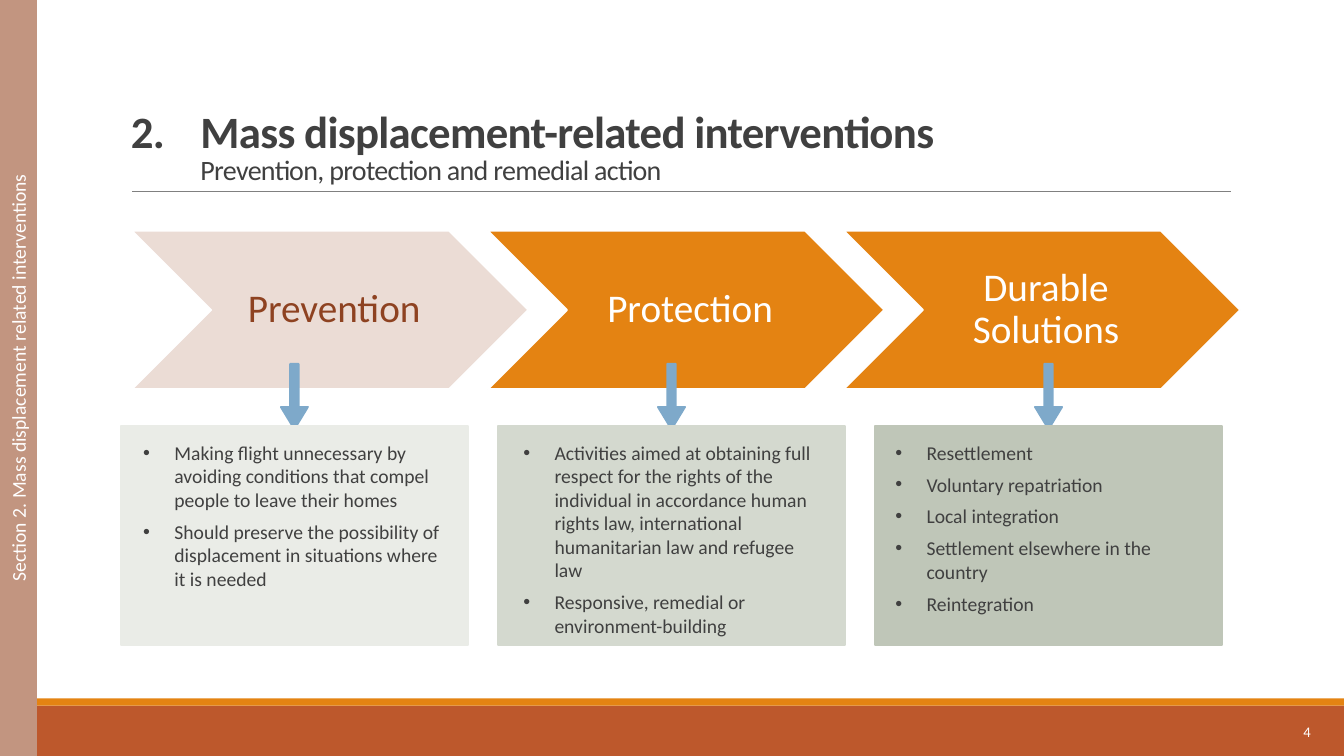
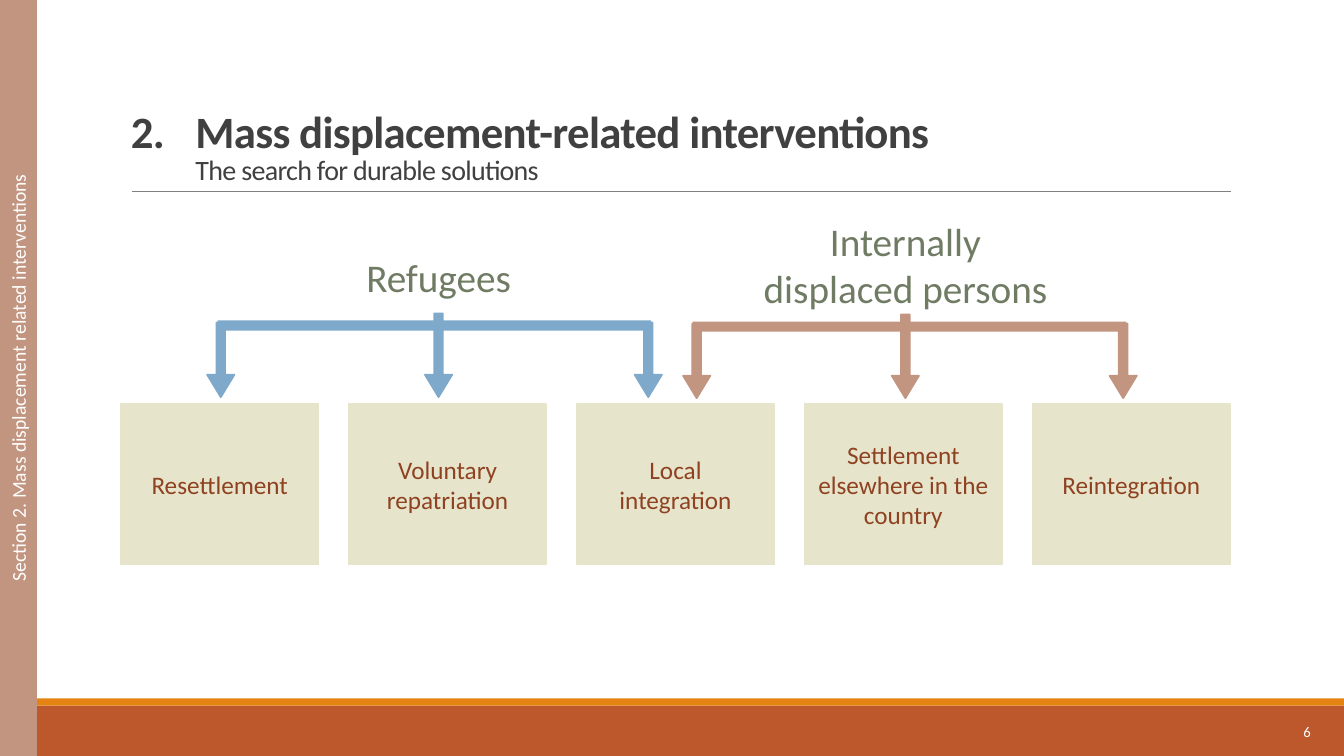
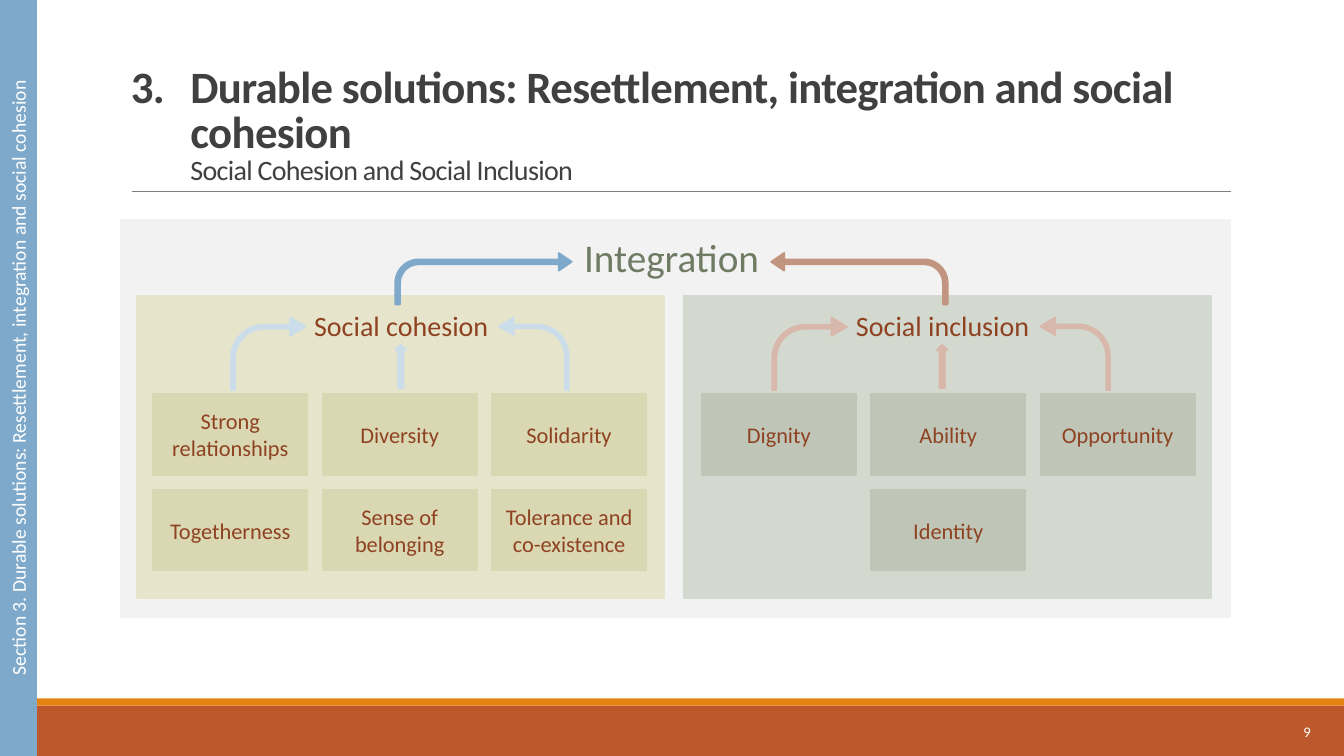
import pptx
import pptx.util
import pptx.dml.color
import pptx.enum.shapes
import pptx.enum.text
import pptx.oxml.ns
from lxml import etree

Inches = pptx.util.Inches
Pt = pptx.util.Pt
SHAPE = pptx.enum.shapes.MSO_SHAPE
ALIGN = pptx.enum.text.PP_ALIGN
ANCHOR = pptx.enum.text.MSO_ANCHOR

COLOURS = {
    "white": "FFFFFF", "ink": "404040", "rule": "808080", "panel": "F2F2F2",
    "rust": "BD582C", "orange": "E48312", "brown": "8E4221", "blush": "EBDCD5",
    "clay": "C29580", "pale clay": "D7B8AB", "blue": "7EA9CA", "pale blue": "CCDDEA",
    "moss": "6F7B63", "sage 1": "EAECE7", "sage 2": "D4D9CF", "sage 3": "BFC6B8",
    "sand": "E7E4CC", "dark sand": "DAD7B3",
}
STEM = (0.316, 0.823)
ARROW_WIDTH = 0.27


class Deck:
    font = "Calibri"

    def __init__(self):
        self.deck = pptx.Presentation()
        self.deck.slide_width = Inches(13.33)
        self.deck.slide_height = Inches(7.5)
        self.page = None

    def colour(self, name):
        return pptx.dml.color.RGBColor.from_string(COLOURS[name])

    def shape(self, kind, place, fill, line=None, adjust=(), flip=False):
        shape = self.page.shapes.add_shape(kind, *map(Inches, place))
        shape.shadow.inherit = False
        shape.fill.solid()
        shape.fill.fore_color.rgb = self.colour(fill)
        if line:
            shape.line.color.rgb = self.colour(line)
            shape.line.width = Pt(1.25)
        else:
            shape.line.fill.background()
        for index, value in enumerate(adjust):
            shape.adjustments[index] = value
        if flip:
            shape._element.spPr.xfrm.set("flipH", "1")
        return shape

    def box(self, place):
        return self.page.shapes.add_textbox(*map(Inches, place))

    def style(self, span, size, colour, bold=False):
        span.font.name = self.font
        span.font.size = Pt(size)
        span.font.bold = bold
        span.font.color.rgb = self.colour(colour)

    def set_text(self, holder, text, size, colour, align=ALIGN.CENTER,
                 anchor=ANCHOR.MIDDLE, insets=(0.1, 0.05, 0.1, 0.05)):
        frame = holder.text_frame
        frame.text = text
        frame.word_wrap = True
        frame.vertical_anchor = anchor
        (frame.margin_left, frame.margin_top,
         frame.margin_right, frame.margin_bottom) = map(Inches, insets)
        for para in frame.paragraphs:
            para.alignment = align
            for span in para.runs:
                self.style(span, size, colour)
        return frame

    def hang(self, para, indent):
        properties = para._p.get_or_add_pPr()
        properties.set("marL", str(Inches(indent)))
        properties.set("indent", str(-Inches(indent)))
        return properties

    def bullets(self, holder, items, left):
        frame = self.set_text(holder, "\n".join(items), 14, "ink", ALIGN.LEFT,
                              ANCHOR.TOP, (left, 0.14, 0.49 - left, 0.05))
        for para in frame.paragraphs:
            para.space_after = Pt(6)
            properties = self.hang(para, 0.31)
            etree.SubElement(properties, pptx.oxml.ns.qn("a:buFont"), typeface="Arial")
            etree.SubElement(properties, pptx.oxml.ns.qn("a:buChar"), char="•")

    def title(self, number, heading, subtitle, indent, width):
        frame = self.set_text(self.box((1.2, 0.31, width, 1.59)),
                              f"{number}.\t{heading}\v{subtitle}", 32, "ink",
                              ALIGN.LEFT, ANCHOR.BOTTOM)
        para = frame.paragraphs[0]
        para.line_spacing = 0.85
        self.hang(para, indent)
        for span, size, bold in zip(para.runs, (32, 20), (True, False)):
            self.style(span, size, "ink", bold)
            span._r.get_or_add_rPr().set("spc", "-50")

    def rule(self):
        line = self.page.shapes.add_connector(
            pptx.enum.shapes.MSO_CONNECTOR.STRAIGHT,
            Inches(1.31), Inches(1.9), Inches(12.21), Inches(1.9))
        line.line.color.rgb = self.colour("rule")
        line.line.width = Pt(0.5)
        etree.SubElement(line._element.spPr, pptx.oxml.ns.qn("a:effectLst"))

    def start(self, number, section, band, heading, subtitle, indent, page_number, width=11):
        self.page = self.deck.slides.add_slide(self.deck.slide_layouts[6])
        self.shape(SHAPE.RECTANGLE, (0, 7, 13.33, 0.5), "rust")
        self.shape(SHAPE.RECTANGLE, (0, 6.93, 13.33, 0.07), "orange")
        self.rule()
        self.title(number, heading, subtitle, indent, width)
        self.set_text(self.box((11.67, 7.06, 1.43, 0.4)), page_number, 10.5, "white", ALIGN.RIGHT)
        side = self.shape(SHAPE.RECTANGLE, (0, 0, 0.36, 7.5), band, band)
        frame = self.set_text(side, f"Section {number}. {section}", 14, "white")
        frame._txBody.bodyPr.set("vert", "vert270")

    def card(self, place, fill, text="", size=16):
        card = self.shape(SHAPE.RECTANGLE, place, fill, fill)
        if text:
            self.set_text(card, text, size, "brown")
        return card

    def label(self, centre, top, width, height, text, size, colour):
        self.set_text(self.box((centre - width / 2, top, width, height)),
                      text, size, colour, anchor=ANCHOR.TOP)

    def down_arrow(self, centre, top, height, colour):
        self.shape(SHAPE.DOWN_ARROW, (centre - ARROW_WIDTH / 2, top, ARROW_WIDTH, height),
                   colour, colour, STEM)

    def bent_arrow(self, place, colour, adjust, flip=False):
        self.shape(SHAPE.BENT_ARROW, place, colour, colour, adjust, flip)

    def fork(self, left, top, colour, centres):
        self.shape(SHAPE.RECTANGLE, (left, top, 4.3, 0.1), colour)
        for centre, rise, height in zip(centres, (-0.02, 0.07, -0.02), (0.74, 0.83, 0.74)):
            self.down_arrow(centre, top - rise, height, colour)


def interventions(deck):
    deck.start(2, "Mass displacement related interventions", "clay",
               "Mass displacement-related interventions",
               "Prevention, protection and remedial action", 0.69, "4")
    stages = [
        ("Prevention", "blush", "brown", "sage 1", 0.22, [
            "Making flight unnecessary by avoiding conditions that compel people to leave their homes",
            "Should preserve the possibility of displacement in situations where it is needed"]),
        ("Protection", "orange", "white", "sage 2", 0.25, [
            "Activities aimed at obtaining full respect for the rights of the individual in accordance "
            "human rights law, international humanitarian law and refugee law",
            "Responsive, remedial or environment-building"]),
        ("Durable Solutions", "orange", "white", "sage 3", 0.2, [
            "Resettlement", "Voluntary repatriation", "Local integration",
            "Settlement elsewhere in the country", "Reintegration"]),
    ]
    for index, (name, fill, colour, card_fill, inset, items) in enumerate(stages):
        chevron = deck.shape(SHAPE.CHEVRON, (1.31 + 3.53 * index, 2.29, 3.93, 1.57), fill, "white")
        frame = deck.set_text(chevron, name, 28, colour, insets=(0.12, 0.04, 0.04, 0.04))
        frame.paragraphs[0].line_spacing = 0.9
        left = 1.2 + 3.74 * index
        deck.down_arrow(left + 1.72, 3.61, 0.65, "blue")
        deck.bullets(deck.card((left, 4.23, 3.44, 2.17), card_fill), items, inset)


def durable_solutions(deck):
    deck.start(2, "Mass displacement related interventions", "clay",
               "Mass displacement-related interventions",
               "The search for durable solutions", 0.64, "6")
    deck.label(4.35, 2.46, 3.21, 0.57, "Refugees", 28, "moss")
    deck.label(8.98, 2.11, 3.21, 1.04, "Internally\vdisplaced persons", 28, "moss")
    solutions = ["Resettlement", "Voluntary repatriation", "Local\vintegration",
                 "Settlement elsewhere in the country", "Reintegration"]
    for index, name in enumerate(solutions):
        deck.card((1.2 + 2.26 * index, 4.01, 1.96, 1.59), "sand", name, 18)
    deck.fork(2.16, 3.18, "blue", (2.19, 4.35, 6.43))
    deck.fork(6.87, 3.19, "clay", (6.91, 8.98, 11.14))


def social_cohesion(deck):
    deck.start(3, "Durable solutions: Resettlement, integration and social cohesion", "blue",
               "Durable solutions: Resettlement, integration and social cohesion",
               "Social Cohesion and Social Inclusion", 0.59, "9", 11.9)
    deck.card((1.2, 2.18, 11, 3.94), "panel")
    deck.label(6.66, 2.27, 3.21, 0.57, "Integration", 28, "moss")
    panels = [
        ("Social cohesion", 1.36, 1.52, 3.98, "sand", "dark sand", "pale blue", [
            ["Strong relationships", "Diversity", "Solidarity"],
            ["Togetherness", "Sense of belonging", "Tolerance and co-existence"]]),
        ("Social inclusion", 6.78, 6.96, 9.35, "sage 2", "sage 3", "pale clay", [
            ["Dignity", "Ability", "Opportunity"],
            [None, "Identity", None]]),
    ]
    small_bend = (0.056, 0.127, 0.212, 0.46)
    for name, left, first, centre, fill, cell_fill, arrow, rows in panels:
        deck.card((left, 2.94, 5.23, 2.99), fill)
        for row, names in enumerate(rows):
            for column, text in enumerate(names):
                if text:
                    deck.card((first + 1.68 * column, 3.91 + 0.95 * row, 1.53, 0.8),
                              cell_fill, text)
        deck.label(centre, 3.01, 2.27, 0.44, name, 20, "brown")
        deck.bent_arrow((centre - 1.69, 3.15, 0.74, 0.72), arrow, small_bend)
        deck.bent_arrow((centre + 0.97, 3.15, 0.69, 0.72), arrow, small_bend, True)
        deck.shape(SHAPE.UP_ARROW, (centre - 0.06, 3.42, 0.11, 0.43), arrow, arrow)
    for left, colour, flip in ((3.92, "blue", False), (7.65, "clay", True)):
        deck.bent_arrow((left, 2.51, 1.75, 0.51), colour, (0.094, 0.172, 0.25, 0.46), flip)


def main():
    deck = Deck()
    interventions(deck)
    durable_solutions(deck)
    social_cohesion(deck)
    deck.deck.save("out.pptx")


if __name__ == "__main__":
    main()
